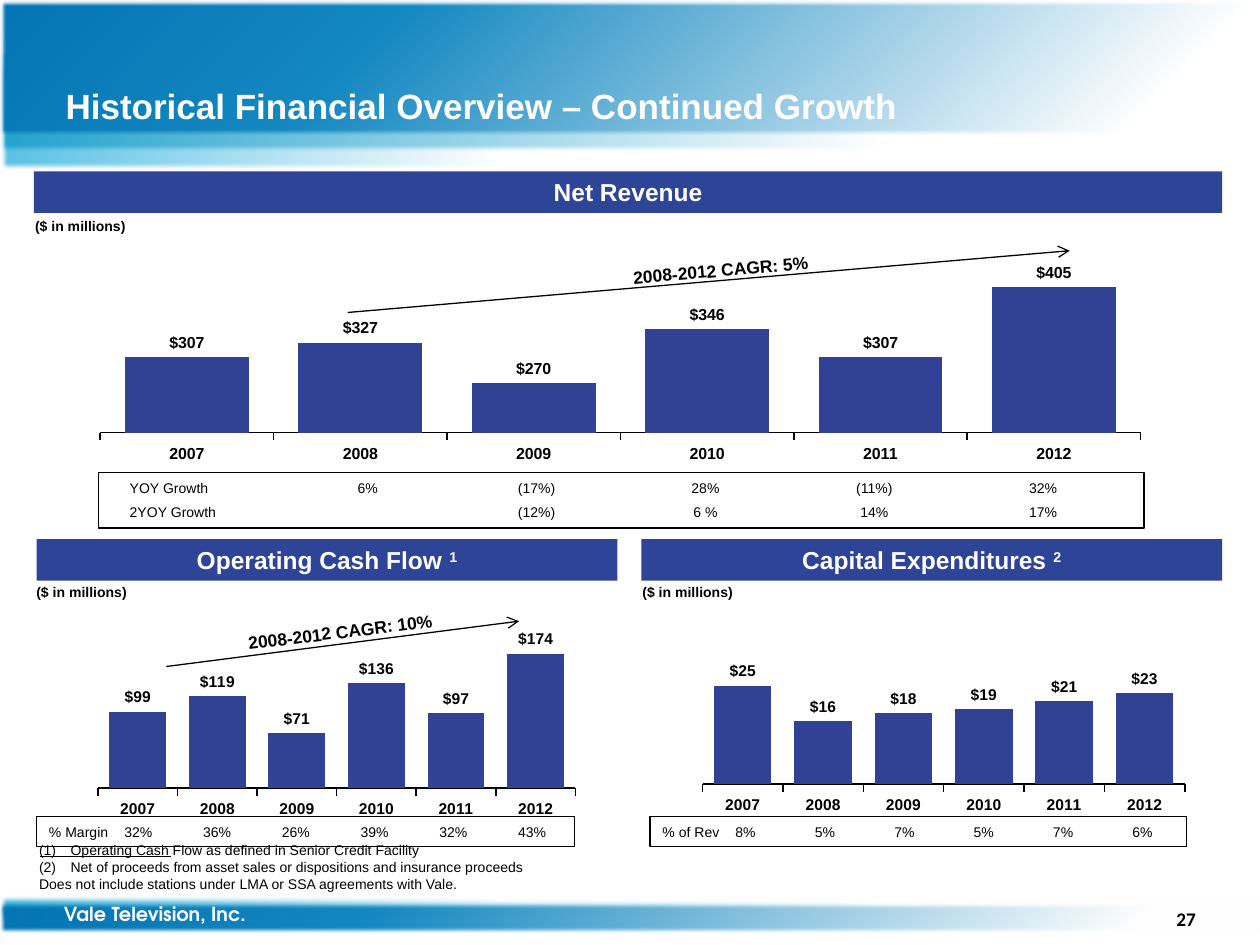
import lxml.etree
import pptx
import pptx.chart.data
import pptx.dml.color
import pptx.enum.chart
import pptx.enum.shapes
import pptx.enum.text
import pptx.oxml
import pptx.oxml.ns
import pptx.util

# The grid has 100 columns and 75 rows of square cells.
CELL = pptx.util.Inches(0.1)
COLORS = {"text": "000000", "white": "FFFFFF", "banner": "2E4497", "bar": "314294",
          "deep": "0474B4", "blue": "1488C1", "teal": "22A2CD", "sky": "59C1E4"}
BANDS = {
    "sky": [(0, "sky"), (40, "white")],
    "teal": [(0, "teal"), (70, "white")],
    "deep": [(0, "deep"), (30, "blue"), (90, "white")],
}
YEARS = ["2007", "2008", "2009", "2010", "2011", "2012"]
RECTANGLE = pptx.enum.shapes.MSO_SHAPE.RECTANGLE
ALIGN = pptx.enum.text.PP_ALIGN
ANCHOR = pptx.enum.text.MSO_ANCHOR


def cells(*lengths):
    return [round(length * CELL) for length in lengths]


def color(name):
    return pptx.dml.color.RGBColor.from_string(COLORS[name])


def element(tag, parent, **attributes):
    return lxml.etree.SubElement(parent, pptx.oxml.ns.qn(tag), attributes)


def style(font, size, color_name="text", bold=False, name="Arial"):
    font.size = pptx.util.Pt(size)
    font.bold = bold
    font.name = name
    font.color.rgb = color(color_name)


def add_run(paragraph, text, size, color_name="text", bold=False, name="Arial"):
    run = paragraph.add_run()
    run.text = text
    style(run.font, size, color_name, bold, name)
    return run


def set_frame(frame, margins=(1, 0.5), anchor=ANCHOR.TOP, wrap=True):
    frame.margin_left = frame.margin_right = cells(margins[0])[0]
    frame.margin_top = frame.margin_bottom = cells(margins[1])[0]
    frame.vertical_anchor = anchor
    frame.word_wrap = wrap


def add_label(slide, place, text, size, align=ALIGN.LEFT, rotation=0, **font):
    box = slide.shapes.add_textbox(*cells(*place))
    box.rotation = rotation
    set_frame(box.text_frame)
    paragraph = box.text_frame.paragraphs[0]
    paragraph.alignment = align
    add_run(paragraph, text, size, **font)


def add_band(slide, place, kind, flipped=False):
    """Soft-edged strip with a gradient that fades to white."""
    shape = slide.shapes.add_shape(RECTANGLE, *cells(*place))
    shape.line.fill.background()
    properties = shape._element.spPr
    if flipped:
        properties.find(pptx.oxml.ns.qn("a:xfrm")).set("flipV", "1")
    gradient = element("a:gradFill", properties, rotWithShape="1")
    stops = element("a:gsLst", gradient)
    for position, name in BANDS[kind]:
        stop = element("a:gs", stops, pos=str(position * 1000))
        element("a:srgbClr", stop, val=COLORS[name])
    if kind == "deep":
        circle = element("a:path", gradient, path="circle")
        element("a:fillToRect", circle, r="100000", b="100000")
    else:
        element("a:lin", gradient, ang="0", scaled="1")
    properties.find(pptx.oxml.ns.qn("a:ln")).addprevious(gradient)
    effects = element("a:effectLst", properties)
    element("a:softEdge", effects, rad="31750")


def add_banner(slide, place, text, note=None):
    shape = slide.shapes.add_shape(RECTANGLE, *cells(*place))
    shape.shadow.inherit = False
    shape.fill.solid()
    shape.fill.fore_color.rgb = color("banner")
    shape.line.fill.background()
    set_frame(shape.text_frame, (0.4, 0.4), ANCHOR.MIDDLE)
    paragraph = shape.text_frame.paragraphs[0]
    paragraph.alignment = ALIGN.CENTER
    add_run(paragraph, text, 14, "white", True)
    if note:
        run = add_run(paragraph, note, 14, "white", True)
        run._r.get_or_add_rPr().set("baseline", "30000")


def add_rates(slide, place, rows, label_column, first_column, step):
    """Framed rows of a label and rates, each rate centred on a tab stop."""
    shape = slide.shapes.add_shape(RECTANGLE, *cells(*place))
    shape.shadow.inherit = False
    shape.fill.background()
    shape.line.color.rgb = color("text")
    shape.line.width = pptx.util.Pt(0.75)
    frame = shape.text_frame
    set_frame(frame, ((label_column - place[0]), 0), ANCHOR.MIDDLE, wrap=False)
    for index, row in enumerate(rows):
        paragraph = frame.add_paragraph() if index else frame.paragraphs[0]
        paragraph.alignment = ALIGN.LEFT
        if index:
            paragraph.space_before = pptx.util.Pt(4)
        tabs = element("a:tabLst", paragraph._p.get_or_add_pPr())
        for number in range(len(row) - 1):
            position = cells(first_column + number * step - label_column)[0]
            element("a:tab", tabs, pos=str(position), algn="ctr")
        add_run(paragraph, "\t".join(row), 8)


def add_columns(slide, place, values, plot_area, minimum, maximum, step, size):
    data = pptx.chart.data.CategoryChartData()
    data.categories = YEARS
    data.add_series("Series 1", values)
    kinds = pptx.enum.chart
    chart = slide.shapes.add_chart(
        kinds.XL_CHART_TYPE.COLUMN_CLUSTERED, *cells(*place), data).chart
    chart.has_title = chart.has_legend = False
    style(chart.font, size, bold=True)

    category_axis, value_axis = chart.category_axis, chart.value_axis
    category_axis.tick_label_position = kinds.XL_TICK_LABEL_POSITION.LOW
    category_axis.major_tick_mark = kinds.XL_TICK_MARK.OUTSIDE
    category_axis.format.line.color.rgb = color("text")
    category_axis.format.line.width = pptx.util.Pt(0.9)
    value_axis.tick_label_position = kinds.XL_TICK_LABEL_POSITION.NONE
    value_axis.has_major_gridlines = False
    value_axis.format.line.fill.background()
    value_axis.minimum_scale, value_axis.maximum_scale = minimum, maximum
    value_axis.major_unit = step

    plot = chart.plots[0]
    plot.gap_width = 40
    plot.vary_by_categories = False
    series_fill = plot.series[0].format.fill
    series_fill.solid()
    series_fill.fore_color.rgb = color("bar")
    plot.has_data_labels = True
    labels = plot.data_labels
    labels.show_value = True
    labels.number_format, labels.number_format_is_linked = "\\$#,##0", False
    labels.position = kinds.XL_LABEL_POSITION.OUTSIDE_END
    style(labels.font, size, bold=True)

    area = chart._chartSpace.chart.plotArea
    for old_layout in area.findall(pptx.oxml.ns.qn("c:layout")):
        area.remove(old_layout)
    layout = element("c:layout", area)
    area.insert(0, layout)
    manual = element("c:manualLayout", layout)
    element("c:layoutTarget", manual, val="inner")
    element("c:xMode", manual, val="edge")
    element("c:yMode", manual, val="edge")
    for tag, share in zip("xywh", plot_area):
        element(f"c:{tag}", manual, val=str(share))


def add_line(slide, ends, arrow=False):
    line = slide.shapes.add_connector(
        pptx.enum.shapes.MSO_CONNECTOR.STRAIGHT, *cells(*ends))
    line.line.color.rgb = color("text")
    line.line.width = pptx.util.Pt(0.75)
    if arrow:
        element("a:tailEnd", line.line._get_or_add_ln(), type="arrow")
    element("a:effectLst", line._element.spPr)


def add_footnotes(slide, place, numbered, closing):
    frame = slide.shapes.add_textbox(*cells(*place)).text_frame
    set_frame(frame, (0, 0), ANCHOR.BOTTOM)
    for index, text in enumerate(numbered + [closing]):
        paragraph = frame.add_paragraph() if index else frame.paragraphs[0]
        if text != closing:
            properties = paragraph._p.get_or_add_pPr()
            indent = cells(2.5)[0]
            properties.set("marL", str(indent))
            properties.set("indent", str(-indent))
            element("a:buFont", properties, typeface="Arial")
            element("a:buAutoNum", properties, type="arabicParenBoth")
        add_run(paragraph, text, 8)


def set_title(slide, place, text):
    title = slide.shapes.title
    title.left, title.top, title.width, title.height = cells(*place)
    set_frame(title.text_frame, (0, 0.4), ANCHOR.MIDDLE)
    paragraph = title.text_frame.paragraphs[0]
    paragraph.alignment = ALIGN.LEFT
    add_run(paragraph, text, 20, "white", True)
    slide.shapes._spTree.append(title._element)


def main():
    presentation = pptx.Presentation()
    presentation.slide_width, presentation.slide_height = cells(100, 75)
    slide = presentation.slides.add_slide(presentation.slide_layouts[5])

    for kind, top, height in [("sky", 5.3, 8.2), ("teal", 3.9, 8.2), ("deep", 0, 10.8)]:
        add_band(slide, (0, top, 100, height), kind)
    for kind, top, height in [("sky", 71, 1.9), ("teal", 71.3, 1.9), ("deep", 71.6, 2.5)]:
        add_band(slide, (0, top, 100, height), kind, flipped=True)
    set_title(slide, (5.2, 6.2, 75.6, 4.3), "Historical Financial Overview – Continued Growth")
    add_label(slide, (92, 71.5, 4.3, 2.9), "27", 11, ALIGN.CENTER, bold=True, name="Calibri")
    add_label(slide, (4.1, 71.1, 29, 2.9), "Vale Television, Inc.", 11,
              color_name="white", bold=True, name="TeX Gyre Adventor")
    add_footnotes(slide, (3.1, 66.8, 93.5, 4), [
        "Operating Cash Flow as defined in Senior Credit Facility",
        "Net of proceeds from asset sales or dispositions and insurance proceeds",
    ], "Does not include stations under LMA or SSA agreements with Vale.")

    add_banner(slide, (2.7, 13.6, 94.3, 3.3), "Net Revenue")
    add_banner(slide, (2.9, 42.8, 46.1, 3.3), "Operating Cash Flow ", "1")
    add_banner(slide, (50.9, 42.8, 46.1, 3.3), "Capital Expenditures ", "2")
    for left, top in [(1.8, 16.8), (1.9, 45.8), (50, 45.8)]:
        add_label(slide, (left, top, 11.3, 2.4), "($ in millions)", 8, bold=True)

    add_columns(slide, (54.8, 45.7, 40, 20.2), [25, 16, 18, 19, 21, 23],
                (0.024, 0.044, 0.957, 0.775), 0, 50, 10, 8.9)
    add_columns(slide, (6.8, 47.3, 40.7, 20.6), [99, 119, 71, 136, 97, 174],
                (0.024, 0.116, 0.931, 0.625), 0, 210, 30, 8.9)
    add_columns(slide, (6, 17.6, 88.8, 21.4), [307, 327, 270, 346, 307, 405],
                (0.022, 0.152, 0.93, 0.631), 200, 440, 30, 9.1)

    add_rates(slide, (7.8, 37.5, 83, 4.4), [
        ["YOY Growth", "6%", "(17%)", "28%", "(11%)", "32%"],
        ["2YOY Growth", "", "(12%)", "6 %", "14%", "17%"],
    ], 10.3, 29.2, 13.4)
    add_rates(slide, (2.9, 64.8, 42.7, 2.4),
              [["% Margin", "32%", "36%", "26%", "39%", "32%", "43%"]], 3.9, 11, 6.25)
    add_rates(slide, (51.6, 64.8, 42.6, 2.4),
              [["% of Rev", "8%", "5%", "7%", "5%", "7%", "6%"]], 52.6, 59.2, 6.3)

    add_line(slide, (3.2, 68, 13.6, 68))
    add_line(slide, (27.6, 24.8, 84.9, 19.9), arrow=True)
    add_line(slide, (13.2, 52.9, 41.2, 49.3), arrow=True)
    add_label(slide, (41.2, 20.1, 32, 2.7), "2008-2012 CAGR: 5%", 10, ALIGN.CENTER, -4.8, bold=True)
    add_label(slide, (11, 48.8, 32, 2.7), "2008-2012 CAGR: 10%", 10, ALIGN.CENTER, -7.1, bold=True)
    presentation.save("out.pptx")


if __name__ == "__main__":
    main()
